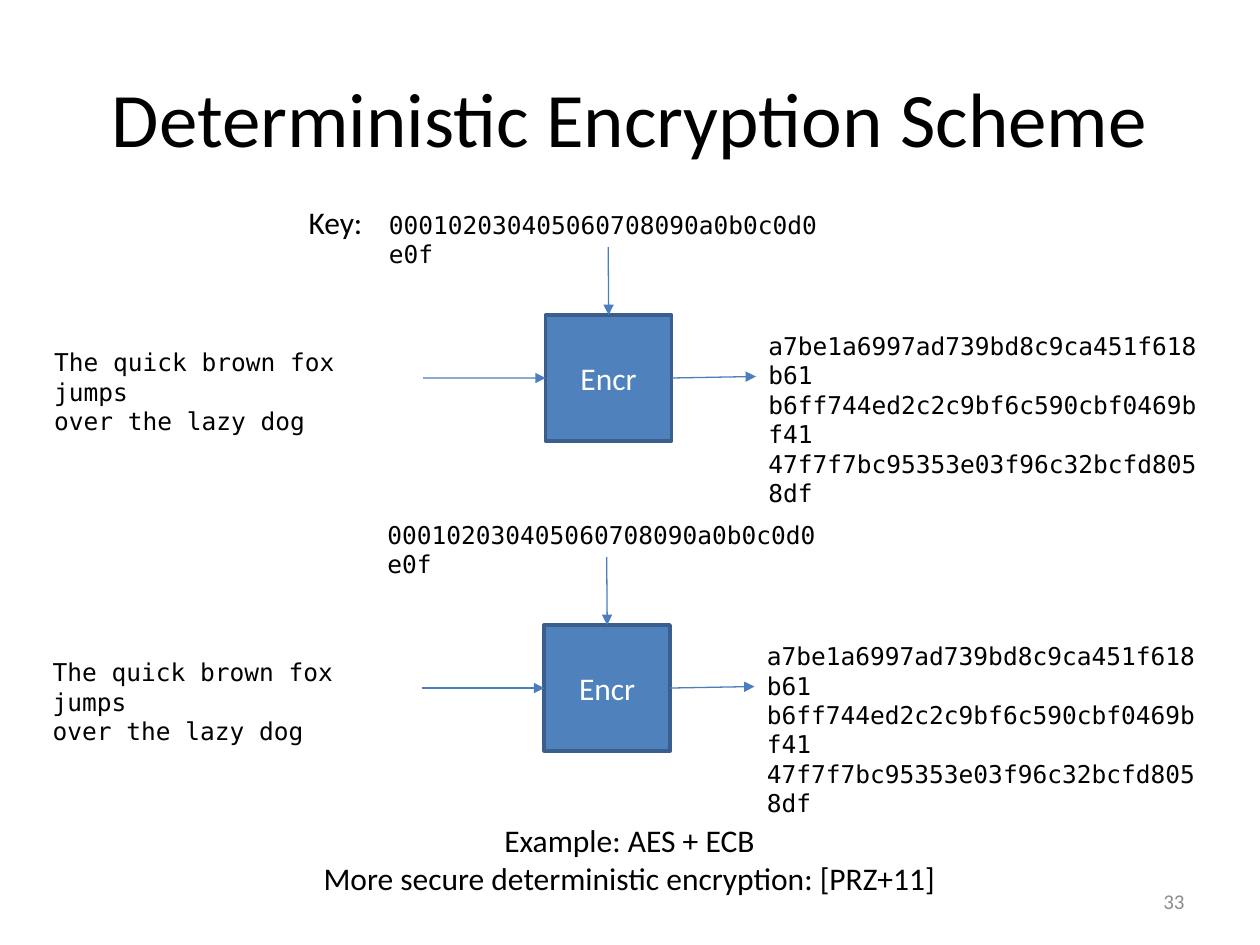
from lxml import etree
from pptx import Presentation
from pptx import util as u
from pptx.dml.color import RGBColor
from pptx.enum import shapes, text
from pptx.oxml.ns import qn

COLORS = {"ink": "000000", "box": "4F81BD", "edge": "3A5F8C",
          "arrow": "4B7EBC", "label": "FFFFFF", "number": "8C8C8C"}
LEFT, CENTER, RIGHT = text.PP_ALIGN.LEFT, text.PP_ALIGN.CENTER, text.PP_ALIGN.RIGHT
TOP, MIDDLE = text.MSO_ANCHOR.TOP, text.MSO_ANCHOR.MIDDLE
SANS = {"name": "Calibri", "size": u.Pt(18)}
MONO = {"name": "DejaVu Sans Mono", "size": u.Pt(14)}

KEY = "000102030405060708090a0b0c0d0e0f"
PLAINTEXT = "The quick brown fox jumps \vover the lazy dog"
CIPHERTEXT = ["a7be1a6997ad739bd8c9ca451f618b61",
              "b6ff744ed2c2c9bf6c590cbf0469bf41",
              "47f7f7bc95353e03f96c32bcfd8058df"]


def rgb(name):
    return RGBColor.from_string(COLORS[name])


class SlideBuilder:
    def __init__(self, slide):
        self.slide = slide

    def fill_text(self, frame, lines, style, color, align, anchor, wrap):
        for name, value in {"word_wrap": wrap, "vertical_anchor": anchor}.items():
            setattr(frame, name, value)
        for index, line in enumerate(lines):
            paragraph = frame.add_paragraph() if index else frame.paragraphs[0]
            paragraph.text = line
            paragraph.alignment = align
            for run in paragraph.runs:
                for name, value in style.items():
                    setattr(run.font, name, value)
                run.font.color.rgb = rgb(color)

    def label(self, lines, at, style=SANS, color="ink", align=LEFT, anchor=TOP, wrap=True):
        field = self.slide.shapes.add_textbox(*map(u.Cm, at))
        self.fill_text(field.text_frame, lines, style, color, align, anchor, wrap)

    def box(self, caption, at):
        block = self.slide.shapes.add_shape(shapes.MSO_SHAPE.RECTANGLE, *map(u.Cm, at))
        block.shadow.inherit = False
        block.fill.solid()
        block.fill.fore_color.rgb = rgb("box")
        block.line.color.rgb = rgb("edge")
        block.line.width = u.Pt(2)
        self.fill_text(block.text_frame, [caption], SANS, "label", CENTER, MIDDLE, True)
        return block

    def arrow(self, start, end, source=None, target=None):
        """source and target are (shape, side) pairs to join the ends to."""
        link = self.slide.shapes.add_connector(
            shapes.MSO_CONNECTOR.STRAIGHT, *map(u.Cm, start + end))
        if source:
            link.begin_connect(*source)
        if target:
            link.end_connect(*target)
        link.line.color.rgb = rgb("arrow")
        link.line.width = u.Pt(0.75)
        outline = link._element.spPr.find(qn("a:ln"))
        etree.SubElement(outline, qn("a:tailEnd"), type="triangle")
        etree.SubElement(link._element.spPr, qn("a:effectLst"))

    def encryption(self, dx, dy):
        """One run of the scheme: key and plaintext in, ciphertext out."""
        side = 2.54
        left, top = 11 + dx, 6.35 + dy
        middle_x, middle_y = left + side / 2, top + side / 2
        encr = self.box("Encr", (left, top, side, side))
        self.label([PLAINTEXT], (0.84 + dx, 6.88 + dy, 7.7, 1.45), MONO)
        self.label([KEY], (7.59 + dx, 4.11 + dy, 9.35, 0.86), MONO)
        self.label(CIPHERTEXT, (15.24 + dx, 6.55 + dy, 9.35, 2.06), MONO)
        self.arrow((middle_x - 0.01, 4.98 + dy), (middle_x, top), target=(encr, 0))
        self.arrow((8.53 + dx, middle_y), (left, middle_y), target=(encr, 1))
        self.arrow((left + side, middle_y), (15.24 + dx, middle_y - 0.03), source=(encr, 3))


def main():
    deck = Presentation()
    deck.slide_width, deck.slide_height = u.Cm(25.4), u.Cm(19.05)
    page = SlideBuilder(deck.slides.add_slide(deck.slide_layouts[6]))

    # Title
    page.label(["Deterministic Encryption Scheme"], (1.27, 0.76, 22.86, 3.18),
               {**SANS, "size": u.Pt(44)}, align=CENTER, anchor=MIDDLE)

    # Two identical encryptions, one below the other
    for dx, dy in ((0, 0), (-0.03, 6.25)):
        page.encryption(dx, dy)
    page.label(["Key:"], (5.97, 3.96, 1.63, 1.02), wrap=False)

    # Closing remarks and page number
    page.label(["Example: AES + ECB", "More secure deterministic encryption: [PRZ+11]"],
               (6.2, 16.43, 12.98, 1.8), align=CENTER, wrap=False)
    page.label(["33"], (18.21, 17.65, 5.92, 1.02), {**SANS, "size": u.Pt(12)},
               "number", RIGHT, MIDDLE)

    deck.save("out.pptx")


if __name__ == "__main__":
    main()
